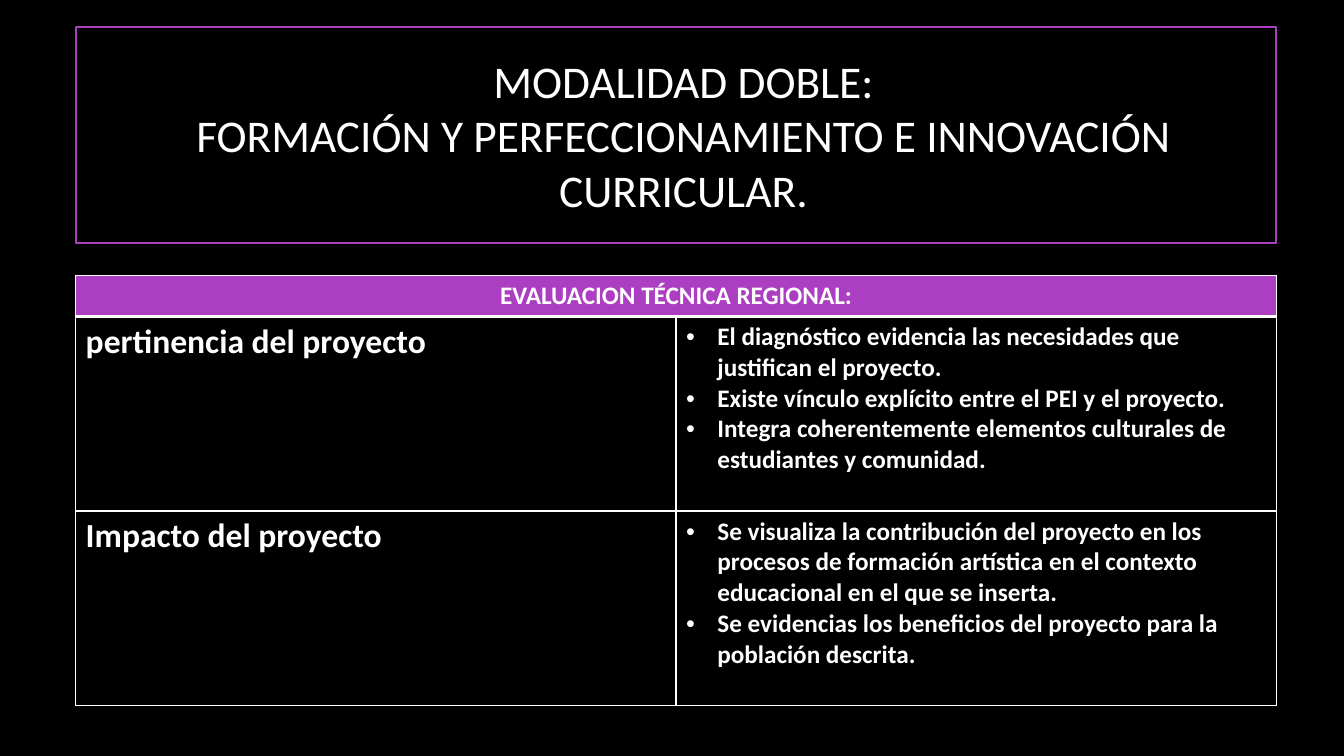
"""Build the slide on the regional technical evaluation of the double modality."""
from dataclasses import dataclass

from lxml.etree import SubElement
from pptx import Presentation
from pptx.dml.color import RGBColor
from pptx.enum.shapes import MSO_SHAPE
from pptx.enum.text import MSO_ANCHOR, PP_ALIGN
from pptx.oxml.ns import qn
from pptx.slide import Slide
from pptx.table import _Cell
from pptx.text.text import TextFrame
from pptx.util import Inches, Pt

BLACK = RGBColor(0x00, 0x00, 0x00)
WHITE = RGBColor(0xFF, 0xFF, 0xFF)
PURPLE = RGBColor(0xAC, 0x3E, 0xC1)
SLIDE_WIDTH, SLIDE_HEIGHT = Inches(13.33), Inches(7.5)
FONT = "Calibri"
HANGING = Inches(0.31)
THIN, THICK = 1, 3
HEADER_SHARE, CRITERION_SHARE = 5.47, 25.73


@dataclass(frozen=True)
class Area:
    """A rectangle in percent of the slide's size."""

    left: float
    top: float
    width: float
    height: float

    def lengths(self) -> tuple[int, int, int, int]:
        """Return left, top, width and height as slide lengths."""
        return (across(self.left), down(self.top),
                across(self.width), down(self.height))


@dataclass(frozen=True)
class Criterion:
    """An evaluation criterion and its indicators."""

    name: str
    indicators: tuple[str, ...]


TITLE = "MODALIDAD DOBLE:\vFORMACIÓN Y PERFECCIONAMIENTO E INNOVACIÓN CURRICULAR."
HEADER = "EVALUACION TÉCNICA REGIONAL:"
CRITERIA = (
    Criterion("pertinencia del proyecto", (
        "El diagnóstico evidencia las necesidades que justifican el proyecto.",
        "Existe vínculo explícito entre el PEI y el proyecto.",
        "Integra coherentemente elementos culturales de estudiantes y comunidad.",
    )),
    Criterion("Impacto del proyecto", (
        "Se visualiza la contribución del proyecto en los procesos de formación "
        "artística en el contexto educacional en el que se inserta.",
        "Se evidencias los beneficios del proyecto para la población descrita.",
    )),
)
TITLE_AREA = Area(5.63, 7.2, 90.47, 21.2)
FRAME_AREA = Area(5.63, 3.6, 89.35, 28.53)
TABLE_AREA = Area(5.63, 36.4, 89.35, HEADER_SHARE + CRITERION_SHARE * len(CRITERIA))


def across(share: float) -> int:
    """Turn a percentage of the slide's width into a length."""
    return round(SLIDE_WIDTH * share / 100)


def down(share: float) -> int:
    """Turn a percentage of the slide's height into a length."""
    return round(SLIDE_HEIGHT * share / 100)


def write(frame: TextFrame, *texts: str, size: float, bold: bool = False,
          align: PP_ALIGN = PP_ALIGN.LEFT, bullet: str = "") -> None:
    """Write one paragraph per text in the given format."""
    frame.word_wrap = True
    for index, text in enumerate(texts):
        paragraph = frame.add_paragraph() if index else frame.paragraphs[0]
        paragraph.text = text
        paragraph.alignment = align
        if bullet:
            properties = paragraph._p.get_or_add_pPr()
            properties.set("marL", str(HANGING))
            properties.set("indent", str(-HANGING))
            SubElement(properties, qn("a:buFont"), typeface="Arial")
            SubElement(properties, qn("a:buChar"), char=bullet)
        for run in paragraph.runs:
            run.font.name = FONT
            run.font.size = Pt(size)
            run.font.bold = bold
            run.font.color.rgb = WHITE


def style_cell(cell: _Cell, fill: RGBColor | None = None,
               top: float = THIN, bottom: float = THIN) -> None:
    """Set a cell's white borders and its fill."""
    properties = cell._tc.get_or_add_tcPr()
    for side, width in (("L", THIN), ("R", THIN), ("T", top), ("B", bottom)):
        border = SubElement(properties, qn(f"a:ln{side}"), w=str(Pt(width)))
        solid = SubElement(border, qn("a:solidFill"))
        SubElement(solid, qn("a:srgbClr"), val=str(WHITE))
    if fill is None:
        cell.fill.background()
    else:
        cell.fill.solid()
        cell.fill.fore_color.rgb = fill


def add_heading(slide: Slide) -> None:
    """Add the title and the frame around it."""
    title = slide.shapes.add_textbox(*TITLE_AREA.lengths()).text_frame
    title.vertical_anchor = MSO_ANCHOR.MIDDLE
    write(title, TITLE, size=32.4, align=PP_ALIGN.CENTER)
    frame = slide.shapes.add_shape(MSO_SHAPE.RECTANGLE, *FRAME_AREA.lengths())
    frame.shadow.inherit = False
    frame.fill.background()
    frame.line.color.rgb = PURPLE
    frame.line.width = Pt(1.5)


def add_evaluation(slide: Slide) -> None:
    """Add the table of criteria and indicators."""
    table = slide.shapes.add_table(
        len(CRITERIA) + 1, 2, *TABLE_AREA.lengths()).table
    table.horz_banding = False
    table.rows[0].height = down(HEADER_SHARE)
    header = table.cell(0, 0)
    header.merge(table.cell(0, 1))
    for cell in table.rows[0].cells:
        style_cell(cell, fill=PURPLE, bottom=THICK)
    write(header.text_frame, HEADER, size=18, bold=True, align=PP_ALIGN.CENTER)
    for row, criterion in enumerate(CRITERIA, start=1):
        table.rows[row].height = down(CRITERION_SHARE)
        name, indicators = table.cell(row, 0), table.cell(row, 1)
        for cell in (name, indicators):
            style_cell(cell, top=THICK if row == 1 else THIN)
        write(name.text_frame, criterion.name, size=24, bold=True)
        write(indicators.text_frame, *criterion.indicators,
              size=18, bold=True, bullet="•")


def main() -> None:
    """Build and save the presentation."""
    presentation = Presentation()
    presentation.slide_width = SLIDE_WIDTH
    presentation.slide_height = SLIDE_HEIGHT
    slide = presentation.slides.add_slide(presentation.slide_layouts[6])
    slide.background.fill.solid()
    slide.background.fill.fore_color.rgb = BLACK
    add_heading(slide)
    add_evaluation(slide)
    presentation.save("out.pptx")


if __name__ == "__main__":
    main()
